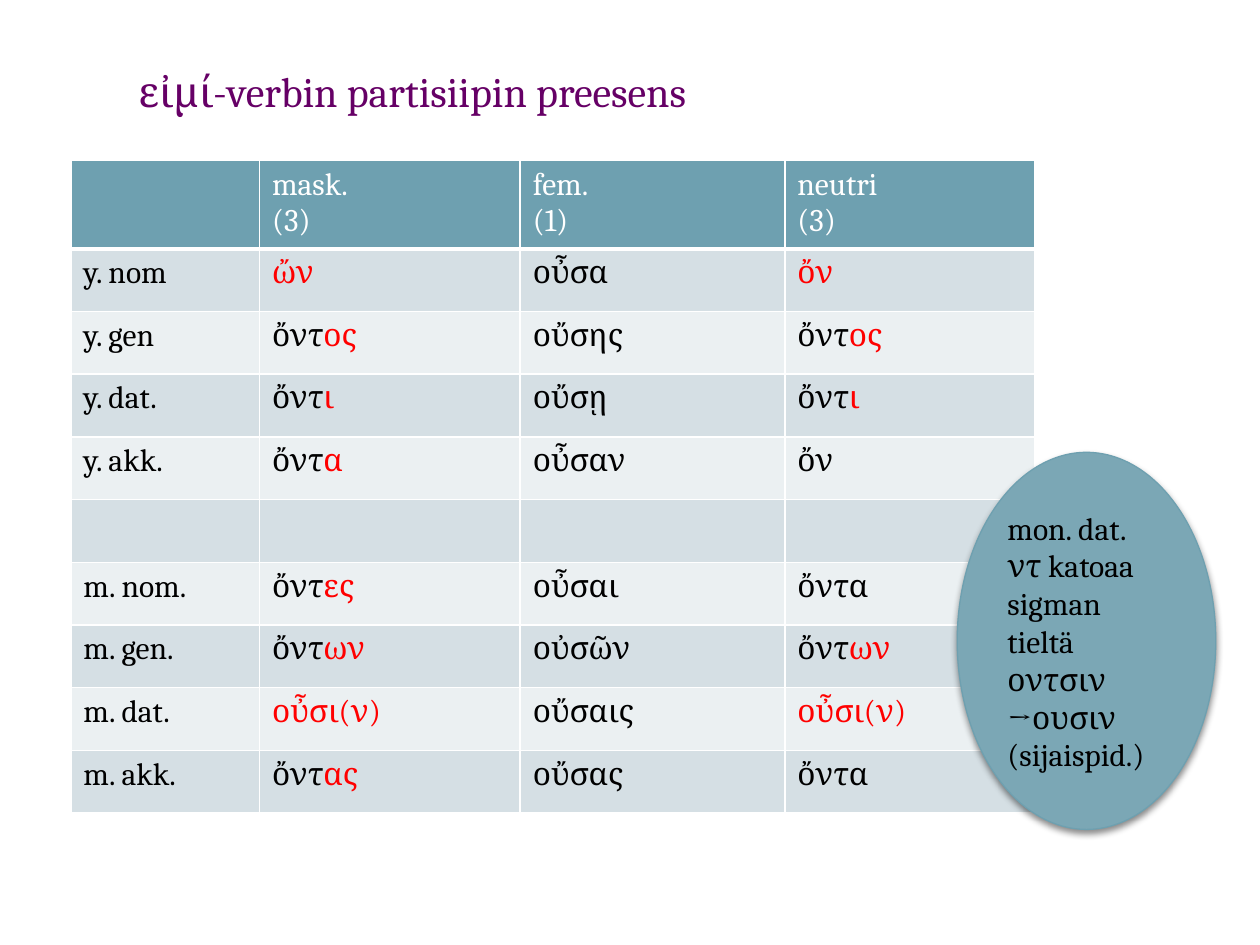
from lxml.etree import SubElement
from pptx import Presentation
from pptx.dml.color import RGBColor
from pptx.enum.shapes import MSO_SHAPE
from pptx.enum.text import MSO_ANCHOR, PP_ALIGN
from pptx.oxml.ns import qn
from pptx.util import Pt

BLACK = RGBColor(0x00, 0x00, 0x00)
WHITE = RGBColor(0xFF, 0xFF, 0xFF)
RED = RGBColor(0xFF, 0x00, 0x00)
PURPLE = RGBColor(0x66, 0x00, 0x66)
TEAL = RGBColor(0x6E, 0xA0, 0xB0)
BUBBLE = RGBColor(0x7B, 0xA7, 0xB5)
DARK = RGBColor(0xD5, 0xDF, 0xE4)
LIGHT = RGBColor(0xEB, 0xF0, 0xF2)

HEADS = ["", "mask.\n(3)", "fem.\n(1)", "neutri\n(3)"]
FORMS = [
    ["y. nom", "|ὤν", "οὖσα", "|ὄν"],
    ["y. gen", "ὄντ|ος", "οὔσης", "ὄντ|ος"],
    ["y. dat.", "ὄντ|ι", "οὔσῃ", "ὄντ|ι"],
    ["y. akk.", "ὄντ|α", "οὖσαν", "ὄν"],
    ["", "", "", ""],
    ["m. nom.", "ὄντ|ες", "οὖσαι", "ὄντα"],
    ["m. gen.", "ὄντ|ων", "οὐσῶν", "ὄντ|ων"],
    ["m. dat.", "|οὖσι(ν)", "οὔσαις", "|οὖσι(ν)"],
    ["m. akk.", "ὄντ|ας", "οὔσας", "ὄντα"],
]
WIDTHS = [107.75, 149, 151.25, 143]
HEAD_H = 49.75
ROW_H = 35.85


def write(frame, text, size=18, color=BLACK, accent=RED, font="Cambria"):
    for i, line in enumerate(text.split("\n")):
        para = frame.add_paragraph() if i else frame.paragraphs[0]
        para.alignment = PP_ALIGN.LEFT
        para.font.size = Pt(size)
        for part, tint in zip(line.split("|"), (color, accent)):
            if part:
                run = para.add_run()
                run.text = part
                run.font.size = Pt(size)
                run.font.name = font
                run.font.color.rgb = tint


def border(cell, **sides):
    props = cell._tc.get_or_add_tcPr()
    for side, width in sides.items():
        line = SubElement(props, qn("a:ln" + side), w=str(Pt(width)))
        fill = SubElement(line, qn("a:solidFill"))
        SubElement(fill, qn("a:srgbClr"), val=str(WHITE))


def add_title(slide, left, top, width, height):
    box = slide.shapes.add_textbox(Pt(left), Pt(top), Pt(width), Pt(height))
    box.text_frame.word_wrap = False
    write(box.text_frame, "εἰμί-verbin partisiipin preesens", size=24, color=PURPLE)


def add_forms(slide, left, top, width, height):
    rows = [HEADS] + FORMS
    table = slide.shapes.add_table(
        len(rows), len(HEADS), Pt(left), Pt(top), Pt(width), Pt(height)
    ).table
    for col, size in zip(table.columns, WIDTHS):
        col.width = Pt(size)
    for r, texts in enumerate(rows):
        table.rows[r].height = Pt(ROW_H if r else HEAD_H)
        for c, text in enumerate(texts):
            cell = table.cell(r, c)
            border(cell, L=1, R=1, T=1, B=1 if r else 3)
            cell.fill.solid()
            cell.fill.fore_color.rgb = (DARK if r % 2 else LIGHT) if r else TEAL
            write(cell.text_frame, text, color=BLACK if r else WHITE)


def add_note(slide, left, top, width, height):
    oval = slide.shapes.add_shape(
        MSO_SHAPE.OVAL, Pt(left), Pt(top), Pt(width), Pt(height)
    )
    oval.fill.solid()
    oval.fill.fore_color.rgb = BUBBLE
    oval.line.color.rgb = TEAL
    oval.line.width = Pt(0.75)
    oval.shadow.inherit = False
    effects = oval._element.spPr.find(qn("a:effectLst"))
    shade = SubElement(
        effects, qn("a:outerShdw"), blurRad=str(Pt(4)), dist=str(Pt(2)),
        dir="5400000", rotWithShape="0",
    )
    tint = SubElement(shade, qn("a:srgbClr"), val=str(BLACK))
    SubElement(tint, qn("a:alpha"), val="45000")
    frame = oval.text_frame
    frame.word_wrap = True
    frame.vertical_anchor = MSO_ANCHOR.MIDDLE
    write(frame, "mon. dat. ντ katoaa sigman tieltä οντσιν →ουσιν (sijaispid.)")


def main():
    deck = Presentation()
    deck.slide_width, deck.slide_height = Pt(720), Pt(540)
    slide = deck.slides.add_slide(deck.slide_layouts[6])
    add_title(slide, 72, 34, 348.5, 58)
    add_forms(slide, 40.5, 91.75, sum(WIDTHS), HEAD_H + ROW_H * len(FORMS))
    add_note(slide, 547, 258.5, 147.75, 215.5)
    deck.save("out.pptx")


if __name__ == "__main__":
    main()
